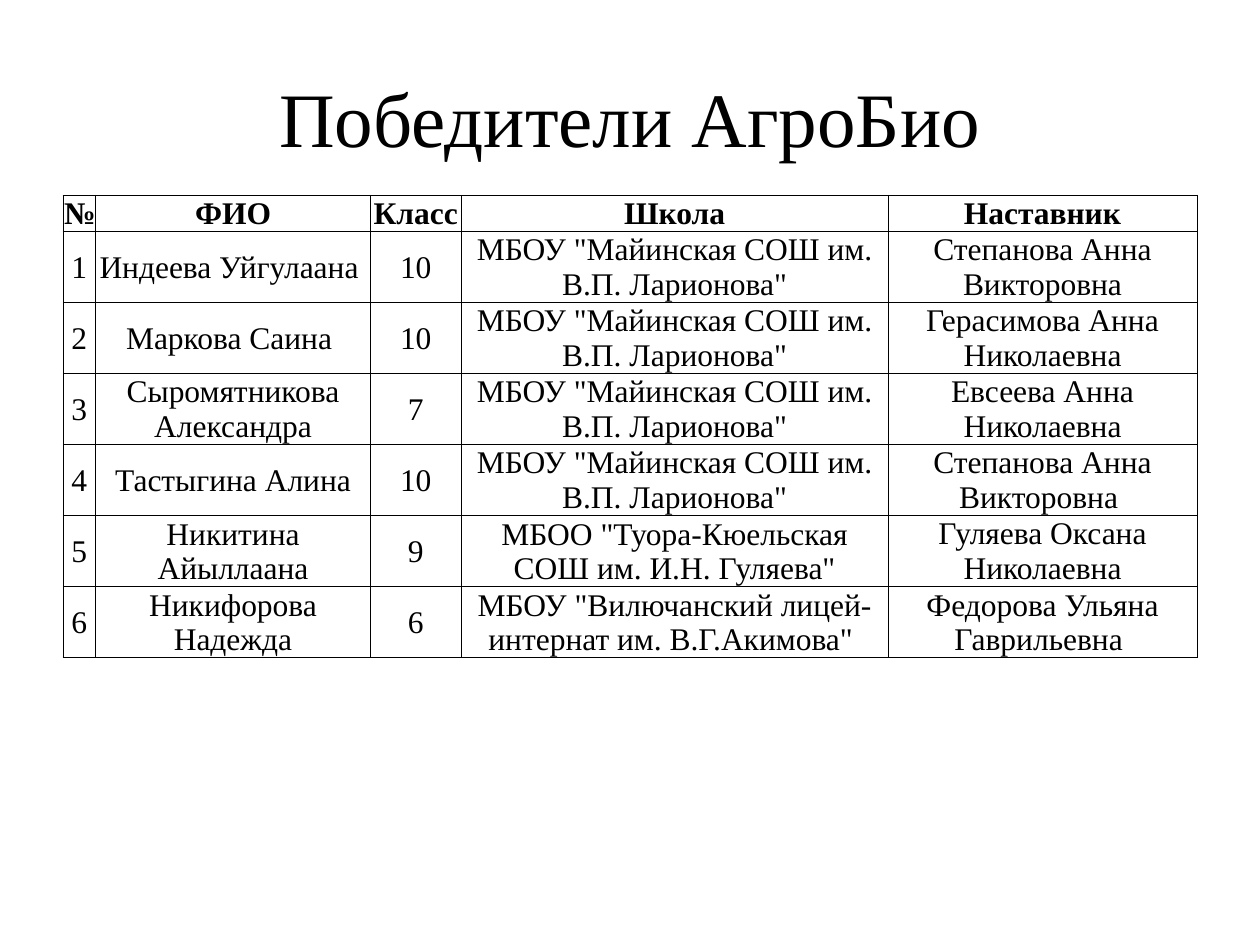
from lxml.etree import SubElement
from pptx import Presentation
from pptx.dml.color import RGBColor
from pptx.enum.text import MSO_ANCHOR, PP_ALIGN
from pptx.oxml.ns import qn
from pptx.util import Inches, Pt

HUES = {"ink": "000000", "paper": "FFFFFF"}
FACE = "Times New Roman"
HEAD = ["№", "ФИО", "Класс", "Школа", "Наставник"]
MAYA = 'МБОУ "Майинская СОШ им. В.П. Ларионова"'
TUORA = 'МБОО "Туора-Кюельская СОШ им. И.Н. Гуляева"'
LYCEE = 'МБОУ "Вилючанский лицей-интернат им. В.Г.Акимова" '
WINNERS = [
    ("Индеева Уйгулаана ", 10, MAYA, "Степанова Анна Викторовна"),
    ("Маркова Саина ", 10, MAYA, "Герасимова Анна Николаевна"),
    ("Сыромятникова Александра", 7, MAYA, "Евсеева Анна Николаевна"),
    ("Тастыгина Алина", 10, MAYA, "Степанова Анна Викторовна "),
    ("Никитина Айыллаана", 9, TUORA, "Гуляева Оксана Николаевна"),
    ("Никифорова Надежда", 6, LYCEE, "Федорова Ульяна Гаврильевна "),
]


class Deck:
    """Holds the style and the current slide; lengths are shares of its size."""

    def __init__(self, wide, high):
        self.prs = Presentation()
        self.prs.slide_width, self.prs.slide_height = Inches(wide), Inches(high)
        self.slide = self.prs.slides.add_slide(self.prs.slide_layouts[5])

    def across(self, share):
        return round(self.prs.slide_width * share)

    def down(self, share):
        return round(self.prs.slide_height * share)

    def box(self, x, y, w, h):
        return self.across(x), self.down(y), self.across(w), self.down(h)

    def label(self, frame, text, size, bold=False):
        frame.text = text
        para = frame.paragraphs[0]
        para.alignment = PP_ALIGN.CENTER
        font = para.runs[0].font
        for key, val in {"name": FACE, "size": Pt(size), "bold": bold}.items():
            setattr(font, key, val)
        font.color.rgb = RGBColor.from_string(HUES["ink"])

    def title(self, text, spot):
        shape = self.slide.shapes.title
        for key, val in zip(("left", "top", "width", "height"), self.box(*spot)):
            setattr(shape, key, val)
        shape.text_frame.vertical_anchor = MSO_ANCHOR.MIDDLE
        self.label(shape.text_frame, text, 44)

    def border(self, cell):
        props = cell._tc.get_or_add_tcPr()
        for side in "LRTB":
            line = SubElement(props, qn(f"a:ln{side}"), w=str(Pt(0.5)))
            fill = SubElement(line, qn("a:solidFill"))
            SubElement(fill, qn("a:srgbClr"), val=HUES["ink"])

    def cell(self, cell, text, head, anchor):
        gap = Inches(0.01)
        look = {"margin_left": gap, "margin_right": gap, "margin_top": gap,
                "margin_bottom": 0, "vertical_anchor": anchor}
        for key, val in look.items():
            setattr(cell, key, val)
        self.border(cell)
        cell.fill.solid()
        cell.fill.fore_color.rgb = RGBColor.from_string(HUES["paper"])
        self.label(cell.text_frame, text, 18, head)

    def table(self, data, cols, spot):
        frame = self.slide.shapes.add_table(len(data), len(cols), *self.box(*spot))
        grid = frame.table
        for col, share in zip(grid.columns, cols):
            col.width = self.across(share)
        for r, items in enumerate(data):
            grid.rows[r].height = self.down(0.06 if r else 0.03)
            for c, item in enumerate(items):
                top = r > 0 and c == len(cols) - 1
                anchor = MSO_ANCHOR.TOP if top else MSO_ANCHOR.MIDDLE
                self.cell(grid.cell(r, c), str(item), r == 0, anchor)
        frame.height = self.down(spot[3])


def main():
    deck = Deck(10, 7.5)
    deck.title("Победители АгроБио", (0.05, 0.04, 0.9, 1 / 6))
    data = [HEAD] + [(n, *row) for n, row in enumerate(WINNERS, 1)]
    cols = [0.026, 0.218, 0.072, 0.339, 0.245]
    deck.table(data, cols, (0.05, 0.04 + 1 / 6, 0.9, 0.53))
    deck.prs.save("out.pptx")


if __name__ == "__main__":
    main()
